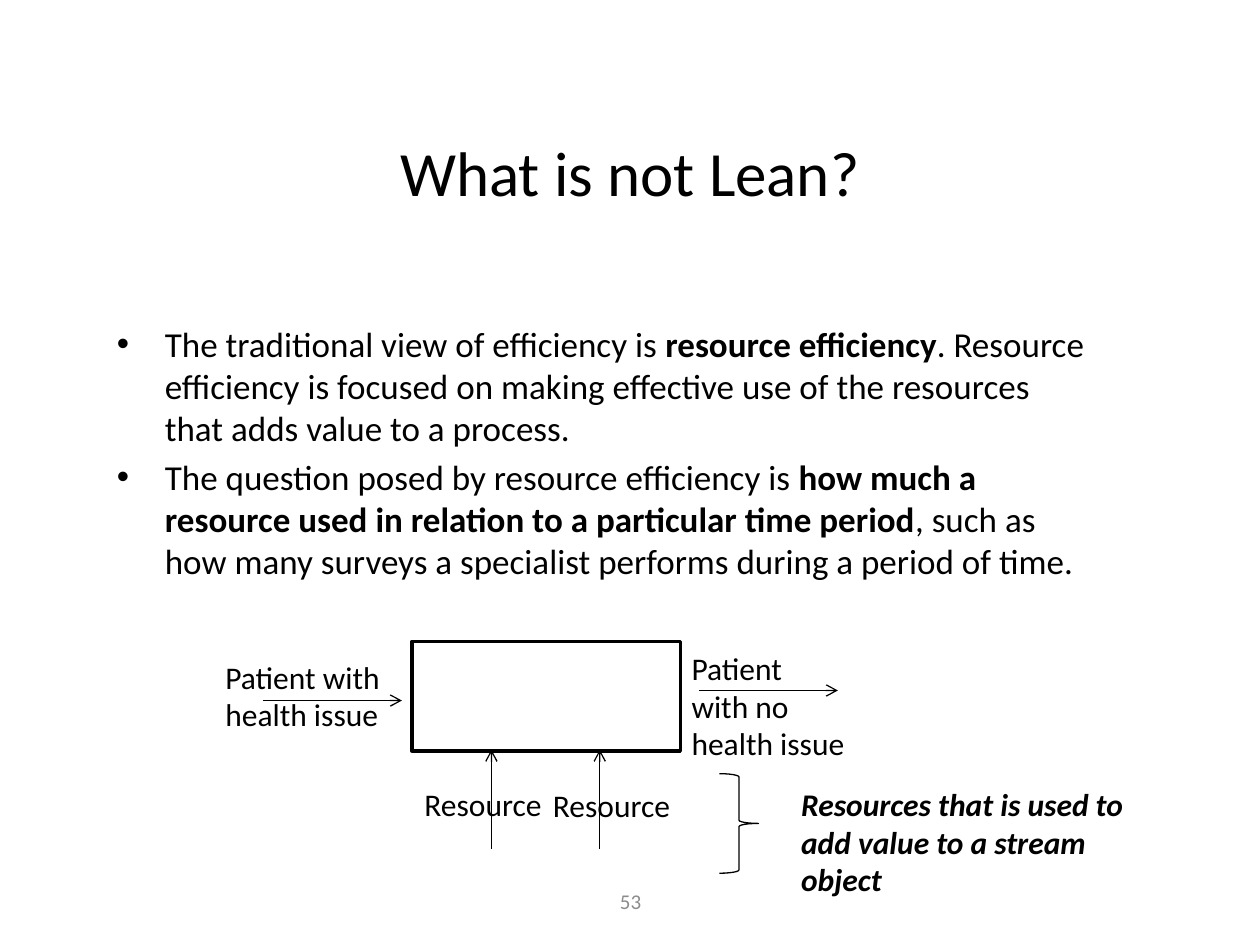
from dataclasses import dataclass

from pptx import Presentation
from pptx.dml.color import RGBColor
from pptx.enum.shapes import MSO_CONNECTOR as Connector, MSO_SHAPE as Shape
from pptx.enum.text import MSO_ANCHOR as Anchor, PP_ALIGN as Align
from pptx.oxml.ns import qn
from pptx.util import Inches, Pt
from lxml.etree import SubElement

BLACK = RGBColor(0x00, 0x00, 0x00)
WHITE = RGBColor(0xFF, 0xFF, 0xFF)
GREY = RGBColor(0x8C, 0x8C, 0x8C)

COLUMNS, ROWS = 100, 75
CELL = Inches(0.1)
FONT = {"name": "Calibri", "bold": False, "italic": False}

BULLETS = [
    [("The traditional view of efficiency is ", False),
     ("resource efficiency", True),
     (". Resource efficiency is focused on making effective use of the "
      "resources that adds value to a process.", False)],
    [("The question posed by resource efficiency is ", False),
     ("how much a resource used in relation to a particular time period", True),
     (", such as how many surveys a specialist performs during a period "
      "of time.", False)],
]


@dataclass
class Box:
    column: float
    row: float
    columns: float
    rows: float

    def area(self, column, row, columns, rows):
        return Box(self.column + column, self.row + row, columns, rows)

    def point(self, column, row):
        return cells(self.column + column, self.row + row)

    def frame(self):
        return cells(self.column, self.row, self.columns, self.rows)


def cells(*counts):
    return [round(count * CELL) for count in counts]


def set_all(target, values):
    for name, value in values.items():
        setattr(target, name, value)


def add_span(para, text, size, color=BLACK, **style):
    span = para.add_run()
    span.text = text
    set_all(span.font, {**FONT, "size": Pt(size), **style})
    span.font.color.rgb = color


def add_frame(page, box, **layout):
    frame = page.shapes.add_textbox(*box.frame()).text_frame
    set_all(frame, {"word_wrap": True, **layout})
    return frame


def add_label(page, box, text, size=18, color=BLACK, align=Align.LEFT,
              anchor=Anchor.TOP, **style):
    para = add_frame(page, box, vertical_anchor=anchor).paragraphs[0]
    para.alignment = align
    add_span(para, text, size, color, **style)


def add_outline(page, kind, box, width):
    shape = page.shapes.add_shape(kind, *box.frame())
    shape.shadow.inherit = False
    shape.line.color.rgb = BLACK
    shape.line.width = Pt(width)
    return shape


def add_arrow(page, start, end):
    arrow = page.shapes.add_connector(Connector.STRAIGHT, *start, *end)
    arrow.line.color.rgb = BLACK
    arrow.line.width = Pt(0.75)
    props = arrow._element.spPr
    SubElement(props.get_or_add_ln(), qn("a:tailEnd"), type="arrow")
    SubElement(props, qn("a:effectLst"))


def add_bullets(page, box):
    frame = add_frame(page, box, margin_top=Inches(0.45))
    for index, spans in enumerate(BULLETS):
        para = frame.add_paragraph() if index else frame.paragraphs[0]
        para.space_before = Pt(4 if index else 0)
        props = para._p.get_or_add_pPr()
        props.set("marL", str(Inches(0.38)))
        props.set("indent", str(-Inches(0.38)))
        SubElement(props, qn("a:buFont"), typeface="Arial")
        SubElement(props, qn("a:buChar"), char="•")
        for text, bold in spans:
            add_span(para, text, 20, bold=bold)


def add_process(page, box):
    process = add_outline(page, Shape.RECTANGLE, box.area(15.8, 0, 21.3, 8.7), 2)
    process.fill.solid()
    process.fill.fore_color.rgb = WHITE
    for column, row in ((4, 4.7), (38.6, 3.9)):
        add_arrow(page, box.point(column, row), box.point(column + 11, row))
    add_label(page, box.area(0, 0.8, 18.9, 7.1), "Patient with health issue")
    add_label(page, box.area(37, 0.1, 14.2, 10.1), "Patient with no health issue")


def add_resources(page, box):
    for column, label_column, label_row in ((6.3, 0, 2.3), (14.9, 10.2, 2.4)):
        add_arrow(page, box.point(column, 7.9), box.point(column, 0))
        add_label(page, box.area(label_column, label_row, 31.5, 4), "Resource")
    brace = add_outline(page, Shape.RIGHT_BRACE, box.area(24.4, 1.9, 3.1, 7.9), 0.75)
    brace.fill.background()
    add_label(page, box.area(29.9, 2.3, 30.1, 10.1),
              "Resources that is used to add value to a stream object",
              bold=True, italic=True)


def main():
    deck = Presentation()
    deck.slide_width, deck.slide_height = cells(COLUMNS, ROWS)
    page = deck.slides.add_slide(deck.slide_layouts[6])
    centred = {"align": Align.CENTER, "anchor": Anchor.MIDDLE}
    add_bullets(page, Box(8.3, 21.1, 79.2, 45))
    add_label(page, Box(34.2, 69.5, 31.7, 4), "53", 12, GREY, **centred)
    add_label(page, Box(12.5, 9.9, 75, 7.4), "What is not Lean?", 36, **centred)
    add_process(page, Box(16.9, 50.9, 51.2, 10.2))
    add_resources(page, Box(32.7, 59.5, 60, 12.4))
    deck.save("out.pptx")


if __name__ == "__main__":
    main()
